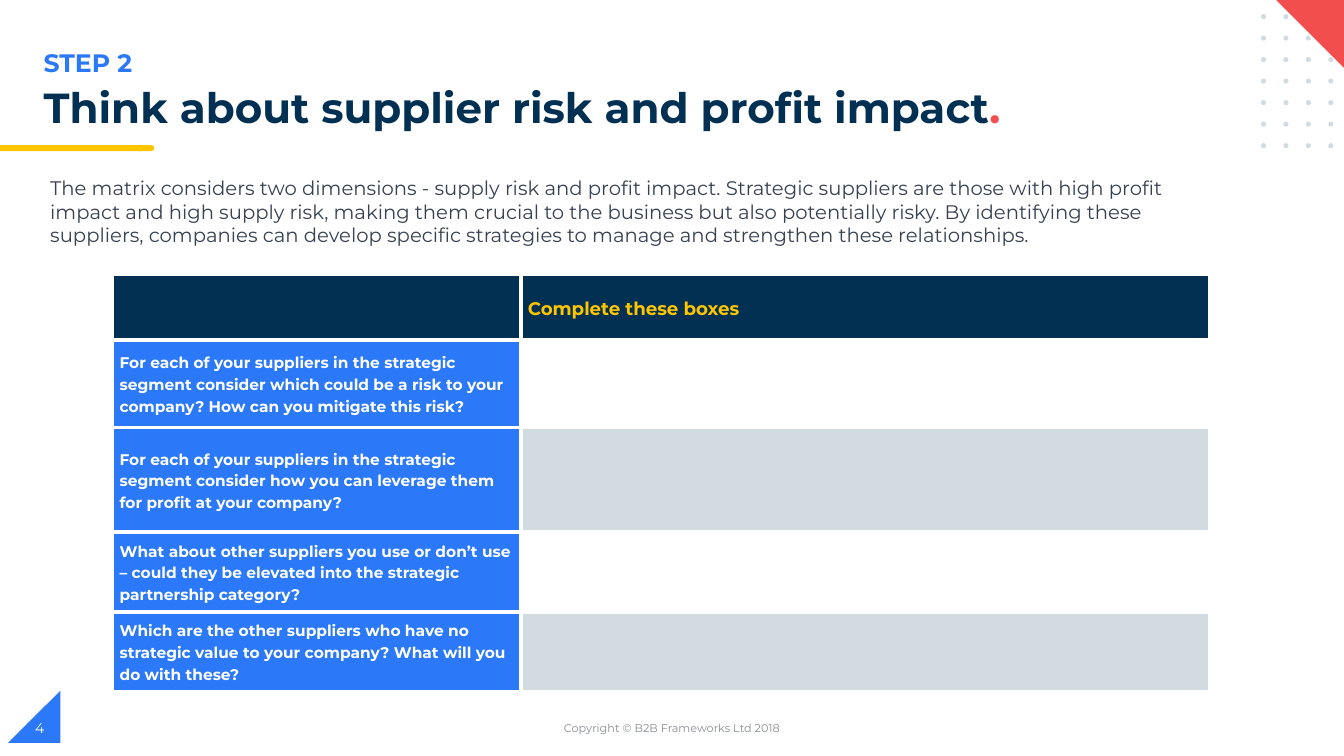
from dataclasses import dataclass
from itertools import product

from lxml.etree import SubElement
from pptx import Presentation
from pptx.dml.color import RGBColor
from pptx.enum.shapes import MSO_SHAPE as Shape
from pptx.enum.text import MSO_ANCHOR as Anchor, MSO_AUTO_SIZE as Fit, PP_ALIGN as Align
from pptx.oxml.ns import qn
from pptx.util import Inches, Pt

WIDE, HIGH = Inches(13.33), Inches(7.5)
COLS, ROWS = 160, 90


@dataclass(frozen=True)
class Theme:
    font: str = "Montserrat"
    navy: str = "023053"
    blue: str = "2B79F8"
    gold: str = "FFC600"
    red: str = "F24E4E"
    pale: str = "D1DBE0"
    white: str = "FFFFFF"
    ink: str = "374151"
    grey: str = "888C97"
    title: int = 30
    step: int = 18
    body: int = 14
    head: int = 13
    cell: int = 11
    page: int = 10
    foot: int = 8


THEME = Theme()

INTRO = (
    "The matrix considers two dimensions - supply risk and profit impact. "
    "Strategic suppliers are those with high profit impact and high supply risk, "
    "making them crucial to the business but also potentially risky. "
    "By identifying these suppliers, companies can develop specific strategies "
    "to manage and strengthen these relationships."
)
TASKS = [
    "For each of your suppliers in the strategic segment consider which could be "
    "a risk to your company? How can you mitigate this risk?",
    "For each of your suppliers in the strategic segment consider how you can "
    "leverage them for profit at your company?",
    "What about other suppliers you use or don’t use – could they be elevated "
    "into the strategic partnership category?",
    "Which are the other suppliers who have no strategic value to your company? "
    "What will you do with these?",
]


def across(cols):
    return round(WIDE * cols / COLS)


def down(rows):
    return round(HIGH * rows / ROWS)


def area(left, top, wide, high):
    """Turn grid columns and rows into slide lengths."""
    return across(left), down(top), across(wide), down(high)


def style(para, size, color, bold=False):
    font = para.font
    font.name, font.size, font.bold = THEME.font, Pt(size), bold
    font.color.rgb = RGBColor.from_string(color)


def add_form(slide, kind, box, color, turn=0):
    form = slide.shapes.add_shape(kind, *area(*box))
    form.shadow.inherit = False
    form.fill.solid()
    form.fill.fore_color.rgb = RGBColor.from_string(color)
    form.line.fill.background()
    form.rotation = turn


def add_text(slide, box, text, size, color, bold=False, anchor=Anchor.TOP, align=Align.LEFT):
    frame = slide.shapes.add_textbox(*area(*box)).text_frame
    frame.word_wrap = True
    frame.vertical_anchor = anchor
    para = frame.paragraphs[0]
    para.text, para.alignment = text, align
    style(para, size, color, bold)


def add_title(slide, box, text, stop):
    """Fill the title and colour its closing stop."""
    title = slide.shapes.title
    title.left, title.top, title.width, title.height = area(*box)
    frame = title.text_frame
    frame.word_wrap, frame.auto_size = True, Fit.NONE
    frame.vertical_anchor = Anchor.TOP
    para = frame.paragraphs[0]
    para.alignment, para.line_spacing = Align.LEFT, 0.9
    para.add_run().text = text
    end = para.add_run()
    end.text = stop
    style(para, THEME.title, THEME.navy, True)
    end.font.color.rgb = RGBColor.from_string(THEME.red)


def add_dots(slide, left, top, cols, rows):
    for col, row in product(range(cols), range(rows)):
        box = left + col * 2.67, top + row * 2.56, 0.6, 0.6
        add_form(slide, Shape.OVAL, box, THEME.pale)


def edge(cell):
    """Draw white rules on all four sides of a cell."""
    props = cell._tc.get_or_add_tcPr()
    for place, side in enumerate(("lnL", "lnR", "lnT", "lnB")):
        line = SubElement(props, qn(f"a:{side}"), w=str(Pt(3)))
        fill = SubElement(line, qn("a:solidFill"))
        SubElement(fill, qn("a:srgbClr"), val=THEME.white)
        props.insert(place, line)


def fill_cell(cell, fill, text="", size=THEME.cell, color=THEME.white):
    cell.fill.solid()
    cell.fill.fore_color.rgb = RGBColor.from_string(fill)
    edge(cell)
    cell.vertical_anchor = Anchor.MIDDLE
    cell.margin_left = cell.margin_right = Inches(0.07)
    cell.margin_top = cell.margin_bottom = 0
    para = cell.text_frame.paragraphs[0]
    para.text, para.line_spacing = text, 1.15
    style(para, size, color, True)


def add_grid(slide, left, top, cols, rows):
    box = area(left, top, sum(cols), sum(rows))
    table = slide.shapes.add_table(len(rows), len(cols), *box).table
    table.horz_banding = False
    for col, wide in zip(table.columns, cols):
        col.width = across(wide)
    for row, high in zip(table.rows, rows):
        row.height = down(high)
    fill_cell(table.cell(0, 0), THEME.navy)
    fill_cell(table.cell(0, 1), THEME.navy, "Complete these boxes", THEME.head, THEME.gold)
    for row, task in enumerate(TASKS, 1):
        fill_cell(table.cell(row, 0), THEME.blue, task)
        fill_cell(table.cell(row, 1), THEME.white if row % 2 else THEME.pale)


def main():
    deck = Presentation()
    deck.slide_width, deck.slide_height = WIDE, HIGH
    slide = deck.slides.add_slide(deck.slide_layouts[5])

    add_form(slide, Shape.RIGHT_TRIANGLE, (0.96, 82.2, 6.24, 6.24), THEME.blue, 270)
    add_form(slide, Shape.FLOWCHART_TERMINATOR, (16.08, 17.28, 2.28, 0.72), THEME.gold)
    add_form(slide, Shape.RECTANGLE, (0, 17.28, 16.92, 0.72), THEME.gold)
    add_dots(slide, 150.12, 1.68, 4, 7)
    add_form(slide, Shape.RIGHT_TRIANGLE, (151.8, -0.12, 8.64, 8.64), THEME.red, 180)

    add_text(slide, (4, 5, 80, 4.8), "STEP 2", THEME.step, THEME.blue, True)
    add_title(slide, (4, 9.84, 133.8, 6.72),
              "Think about supplier risk and profit impact", ".")
    add_text(slide, (4.8, 20.4, 137.6, 9.72), INTRO, THEME.body, THEME.ink)
    add_grid(slide, 13.4, 32.64, (48.6, 82.08), (7.8, 10.44, 12.48, 9.48, 9.48))
    add_text(slide, (53, 84.24, 54, 4.8), "Copyright © B2B Frameworks Ltd 2018",
             THEME.foot, THEME.grey, anchor=Anchor.MIDDLE, align=Align.CENTER)
    add_text(slide, (3, 84.24, 36, 4.8), "4", THEME.page, THEME.white, anchor=Anchor.MIDDLE)
    deck.save("out.pptx")


if __name__ == "__main__":
    main()
